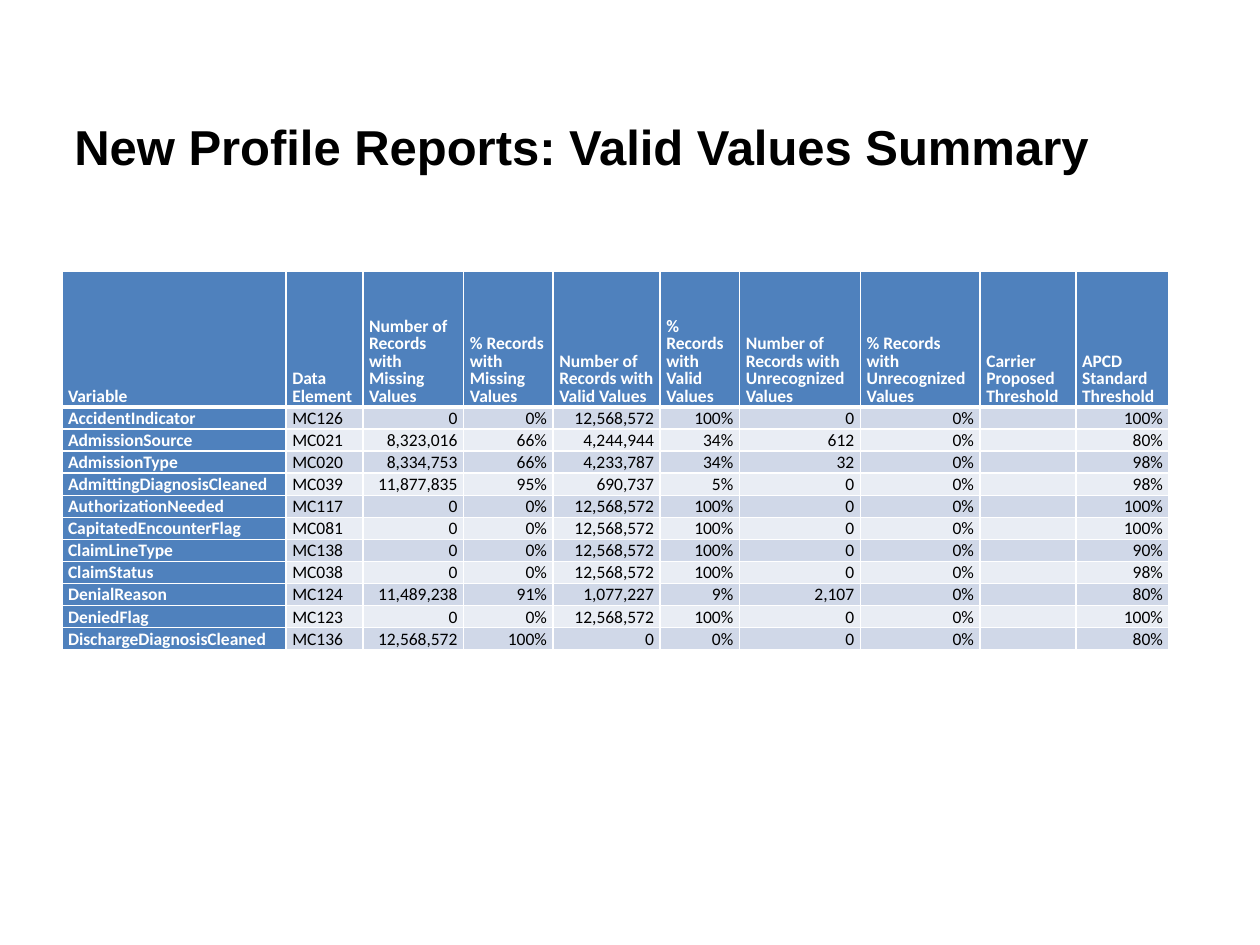
from lxml.etree import SubElement
from pptx import Presentation
from pptx.dml.color import RGBColor
from pptx.enum.text import MSO_ANCHOR, PP_ALIGN
from pptx.oxml.ns import qn
from pptx.util import Inches, Pt

BLACK = RGBColor(0x00, 0x00, 0x00)
WHITE = RGBColor(0xFF, 0xFF, 0xFF)
BLUE = RGBColor(0x4F, 0x81, 0xBD)
BANDS = (RGBColor(0xD0, 0xD8, 0xE8), RGBColor(0xE9, 0xED, 0xF4))

COL_WIDTHS = (1.78, 0.61, 0.8, 0.71, 0.85, 0.63, 0.96, 0.95, 0.76, 0.74)
HEADER_HEIGHT = 1.08
HEADERS = (
    "Variable", "Data Element", "Number of Records with Missing Values",
    "% Records with Missing Values", "Number of Records with Valid Values",
    "% Records with Valid Values", "Number of Records with Unrecognized Values",
    "% Records with Unrecognized Values", "Carrier Proposed Threshold",
    "APCD Standard Threshold",
)
RECORDS = (
    ("AccidentIndicator", "MC126", "0", "0%", "12,568,572", "100%", "0", "0%", "", "100%"),
    ("AdmissionSource", "MC021", "8,323,016", "66%", "4,244,944", "34%", "612", "0%", "", "80%"),
    ("AdmissionType", "MC020", "8,334,753", "66%", "4,233,787", "34%", "32", "0%", "", "98%"),
    ("AdmittingDiagnosisCleaned", "MC039", "11,877,835", "95%", "690,737", "5%", "0", "0%", "", "98%"),
    ("AuthorizationNeeded", "MC117", "0", "0%", "12,568,572", "100%", "0", "0%", "", "100%"),
    ("CapitatedEncounterFlag", "MC081", "0", "0%", "12,568,572", "100%", "0", "0%", "", "100%"),
    ("ClaimLineType", "MC138", "0", "0%", "12,568,572", "100%", "0", "0%", "", "90%"),
    ("ClaimStatus", "MC038", "0", "0%", "12,568,572", "100%", "0", "0%", "", "98%"),
    ("DenialReason", "MC124", "11,489,238", "91%", "1,077,227", "9%", "2,107", "0%", "", "80%"),
    ("DeniedFlag", "MC123", "0", "0%", "12,568,572", "100%", "0", "0%", "", "100%"),
    ("DischargeDiagnosisCleaned", "MC136", "12,568,572", "100%", "0", "0%", "0", "0%", "", "80%"),
)


def write_text(tf, text, font="Calibri", size=10, color=BLACK, bold=False,
               align=PP_ALIGN.LEFT, spacing=None):
    p = tf.paragraphs[0]
    p.alignment = align
    p.line_spacing = spacing
    if not text:
        SubElement(p._p, qn("a:endParaRPr"), sz=str(size * 100))
        return
    r = p.add_run()
    r.text = text
    r.font.name = font
    r.font.size = Pt(size)
    r.font.bold = bold
    r.font.color.rgb = color


def set_borders(cell, color, **widths):
    tcPr = cell._tc.get_or_add_tcPr()
    for side in ("L", "R", "T", "B"):
        ln = SubElement(tcPr, qn(f"a:ln{side}"), w=str(Pt(widths.get(side, 1))))
        fill = SubElement(ln, qn("a:solidFill"))
        SubElement(fill, qn("a:srgbClr"), val=str(color))


def add_title(s, left, top, width, height):
    sp = s.shapes.title
    sp.left, sp.top = Inches(left), Inches(top)
    sp.width, sp.height = Inches(width), Inches(height)
    tf = sp.text_frame
    tf.word_wrap = True
    tf.vertical_anchor = MSO_ANCHOR.MIDDLE
    write_text(tf, "New Profile Reports: Valid Values Summary",
               font="Arial", size=28, bold=True)


def add_summary_table(s, left, top, width, height):
    rows = (HEADERS,) + RECORDS
    table = s.shapes.add_table(len(rows), len(HEADERS), Inches(left), Inches(top),
                               Inches(width), Inches(height)).table
    for column, share in zip(table.columns, COL_WIDTHS):
        column.width = Inches(width * share / sum(COL_WIDTHS))
    row_height = (height - HEADER_HEIGHT) / len(RECORDS)
    for i, values in enumerate(rows):
        table.rows[i].height = Inches(row_height if i else HEADER_HEIGHT)
        for j, text in enumerate(values):
            cell = table.cell(i, j)
            heading = i == 0 or j == 0
            cell.margin_left = cell.margin_right = Inches(0.05)
            cell.margin_top = cell.margin_bottom = 0
            cell.vertical_anchor = MSO_ANCHOR.BOTTOM
            set_borders(cell, WHITE, B=1 if i else 3, T=3 if i == 1 else 1)
            cell.fill.solid()
            cell.fill.fore_color.rgb = BLUE if heading else BANDS[(i - 1) % 2]
            write_text(cell.text_frame, text, bold=heading,
                       color=WHITE if heading else BLACK,
                       align=PP_ALIGN.RIGHT if i and j > 1 else PP_ALIGN.LEFT,
                       spacing=Pt(10))


def main():
    prs = Presentation()
    prs.slide_width, prs.slide_height = Inches(10), Inches(7.5)
    s = prs.slides.add_slide(prs.slide_layouts[5])
    add_title(s, 0.49, 0.81, 8.79, 0.7)
    add_summary_table(s, 0.49, 2.15, 8.79, 3.01)
    prs.save("out.pptx")


if __name__ == "__main__":
    main()
